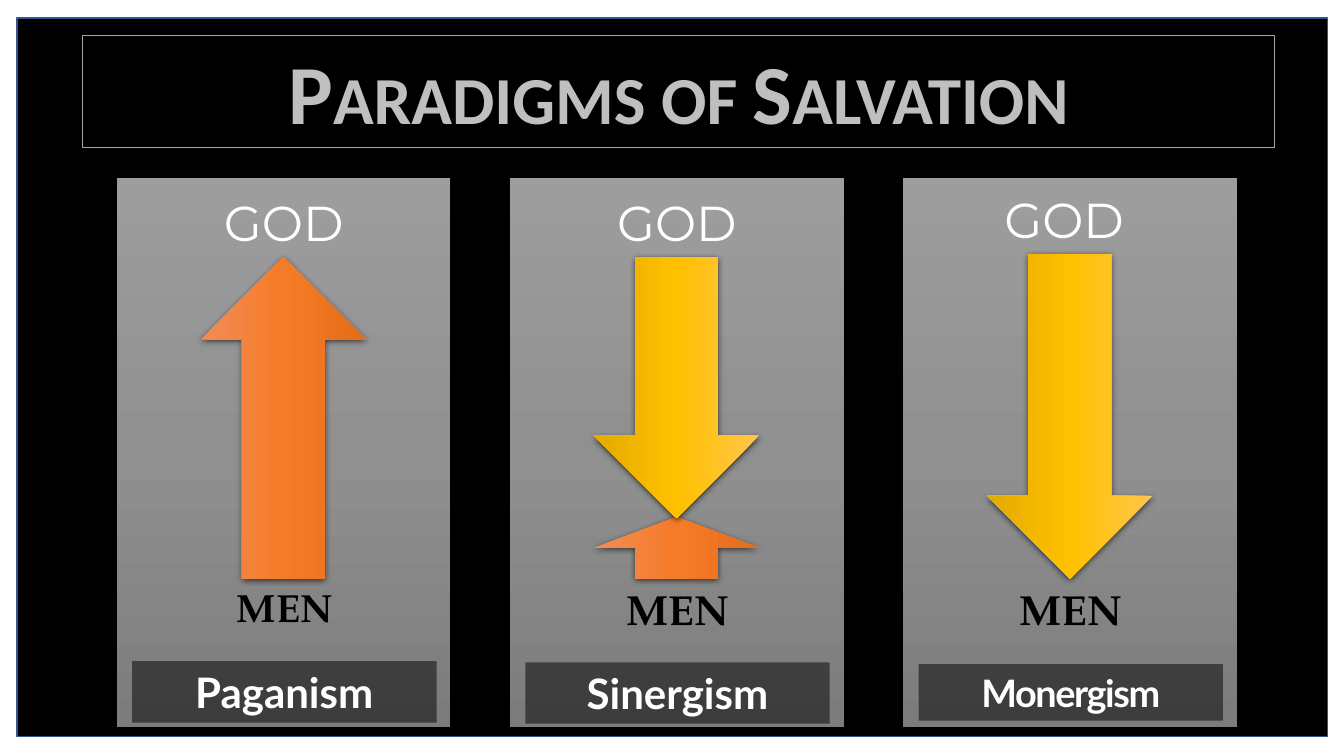
from copy import deepcopy

from pptx import Presentation
from pptx.dml.color import RGBColor
from pptx.enum.shapes import MSO_SHAPE as Shape
from pptx.enum.text import MSO_ANCHOR as Anchor, PP_ALIGN as Align
from pptx.oxml import parse_xml
from pptx.oxml.ns import nsdecls, qn
from pptx.util import Inches, Pt

COLORS = {
    "black": "000000", "white": "FFFFFF", "frame": "325491",
    "title": "BFBFBF", "title_line": "A5A5A5",
}
GRADIENTS = {
    "panel": ("9D9D9D", "909090", "7C7C7C"),
    "men": ("F18C57", "F67B28", "E56C19"),
    "god": ("FFC64B", "FFC000", "E3AB00"),
}
SHADOW = (
    f'<a:effectLst {nsdecls("a")}><a:outerShdw blurRad="57150" dist="19050" '
    'dir="5400000" algn="ctr" rotWithShape="0"><a:srgbClr val="000000">'
    '<a:alpha val="63000"/></a:srgbClr></a:outerShdw></a:effectLst>'
)


class SalvationSlide:
    def __init__(self, prs):
        self.shapes = prs.slides.add_slide(prs.slide_layouts[6]).shapes

    def color(self, name):
        return RGBColor.from_string(COLORS[name])

    def box(self, left, top, width, height, fill=None, line=None, weight=1,
            alpha=None, kind=Shape.RECTANGLE):
        shape = self.shapes.add_shape(
            kind, Inches(left), Inches(top), Inches(width), Inches(height))
        shape.shadow.inherit = False
        if fill in GRADIENTS:
            self.gradient(shape, GRADIENTS[fill])
        elif fill:
            shape.fill.solid()
            shape.fill.fore_color.rgb = self.color(fill)
        else:
            shape.fill.background()
        if alpha:
            tint = shape._element.spPr.find(qn("a:solidFill"))[0]
            tint.append(parse_xml(f'<a:alpha {nsdecls("a")} val="{alpha * 1000}"/>'))
        if line:
            shape.line.color.rgb = self.color(line)
            shape.line.width = Pt(weight)
        else:
            shape.line.fill.background()
        return shape

    def gradient(self, shape, tones):
        shape.fill.gradient()
        shape.fill.gradient_angle = 270
        stop_list = next(shape._element.spPr.iter(qn("a:gsLst")))
        stop_list.append(deepcopy(stop_list[0]))
        for stop, tone, position in zip(shape.fill.gradient_stops, tones, (0, 0.5, 1)):
            stop.color.rgb = RGBColor.from_string(tone)
            stop.position = position

    def arrow(self, center, top, bottom, giver):
        """Vertical arrow: down from God, up from men."""
        length, breadth = bottom - top, 1.64
        arrow = self.box(center - length / 2, (top + bottom - breadth) / 2,
                         length, breadth, giver, kind=Shape.RIGHT_ARROW)
        arrow.rotation = 90 if giver == "god" else 270
        properties = arrow._element.spPr
        properties.replace(properties.find(qn("a:effectLst")), parse_xml(SHADOW))

    def add_text(self, shape, text, size, font, color, bold=True, **run_options):
        frame = shape.text_frame
        frame.word_wrap = True
        paragraph = frame.paragraphs[0]
        paragraph.alignment = Align.CENTER
        run = paragraph.add_run()
        run.text = text
        paragraph.font.size = Pt(size)
        paragraph.font.name = font
        paragraph.font.bold = bold
        paragraph.font.color.rgb = self.color(color)
        for option, value in run_options.items():
            run._r.get_or_add_rPr().set(option, value)

    def label(self, left, top, width, height, *style, **options):
        box = self.shapes.add_textbox(
            Inches(left), Inches(top), Inches(width), Inches(height))
        self.add_text(box, *style, **options)

    def banner(self, box, *style, **options):
        box.text_frame.vertical_anchor = Anchor.MIDDLE
        self.add_text(box, *style, **options)


# Per paradigm: name, name size, name top and height, letter spacing,
# GOD offset and top, MEN size, arrows (top, bottom, giver)
PARADIGMS = [
    ("Paganism", 30, 6.56, 0.61, {}, 0.31, 1.86, 28, [(2.55, 5.74, "men")]),
    ("Sinergism", 30, 6.57, 0.61, {}, 0.31, 1.86, 30,
     [(5.13, 5.74, "men"), (2.55, 5.14, "god")]),
    ("Monergism", 27, 6.59, 0.56, {"spc": "-100"}, 0.25, 1.83, 30,
     [(2.52, 5.74, "god")]),
]
PANEL_LEFT, PANEL_STEP, PANEL_WIDTH = 1.15, 3.9, 3.32


def main():
    prs = Presentation()
    prs.slide_width, prs.slide_height = Inches(13.33), Inches(7.5)
    slide = SalvationSlide(prs)

    # Backdrop and title
    slide.box(0.17, 0.18, 13, 7.13, "black", "frame")
    title = slide.box(0.82, 0.35, 11.82, 1.11, line="title_line", weight=0.75)
    slide.banner(title, "Paradigms of Salvation", 60, "Calibri", "title", cap="small")

    # One panel per paradigm
    for column, paradigm in enumerate(PARADIGMS):
        (name, name_size, name_top, name_height, spacing,
         god_offset, god_top, men_size, arrows) = paradigm
        left = PANEL_LEFT + column * PANEL_STEP
        slide.box(left, 1.76, PANEL_WIDTH, 5.46, "panel", "black", 0.5)
        slide.label(left + god_offset, god_top, 2.71, 0.69,
                    "GOD", 35, "Montserrat", "white", bold=False)
        slide.label(left + 0.81, 5.74, 1.73, 0.61,
                    "MEN", men_size, "TeX Gyre Pagella", "black")
        for top, bottom, giver in arrows:
            slide.arrow(left + PANEL_WIDTH / 2, top, bottom, giver)
        name_plate = slide.box(left + 0.16, name_top, 3.02, name_height,
                               "black", alpha=50)
        slide.banner(name_plate, name, name_size, "Lato", "white", **spacing)

    prs.save("out.pptx")


if __name__ == "__main__":
    main()
